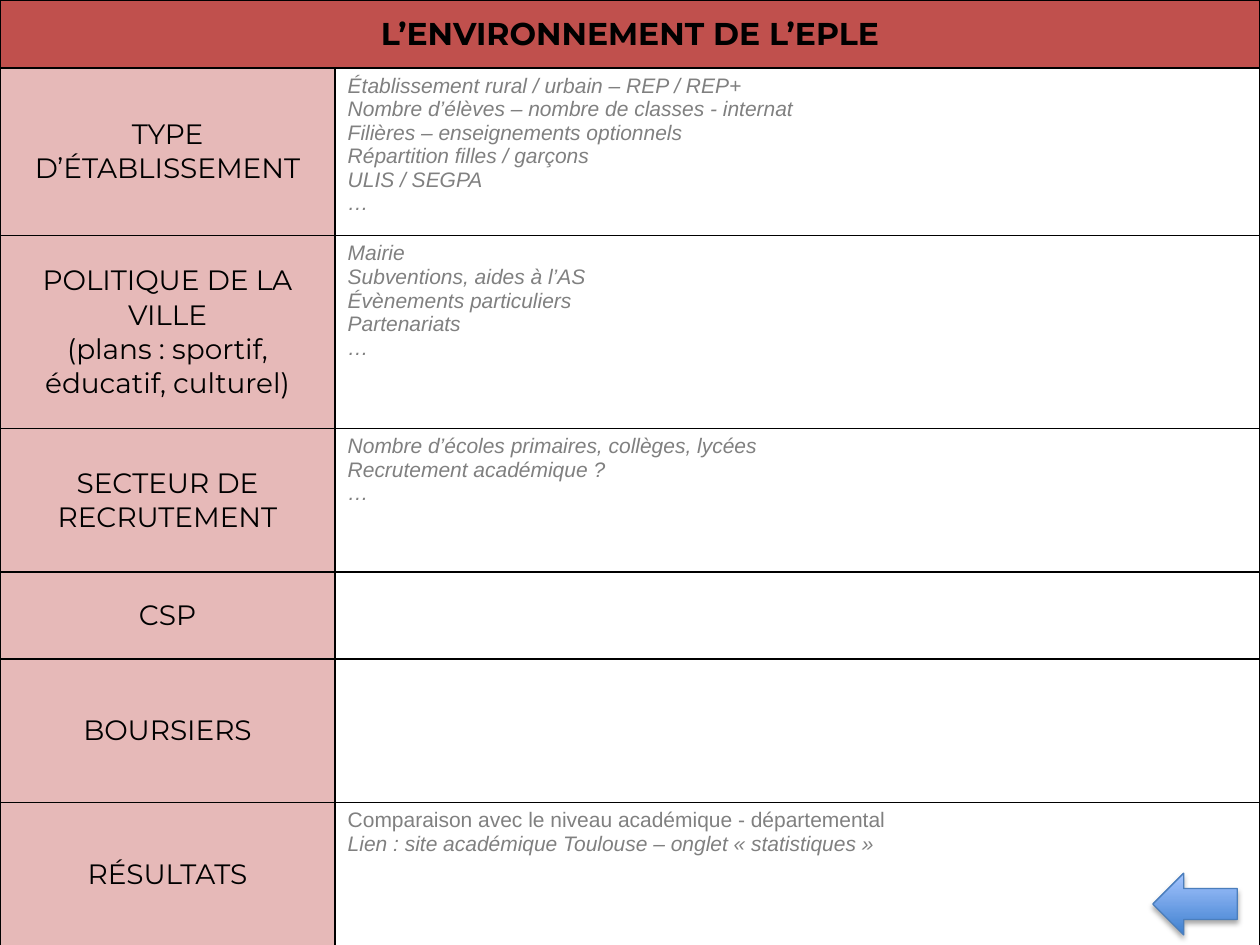
from lxml import etree
from pptx import Presentation
from pptx import util as u
from pptx.dml.color import RGBColor
from pptx.enum import shapes, text
from pptx.oxml import parse_xml
from pptx.oxml.ns import nsdecls, qn

COLUMN_WIDTHS = [2.66, 7.34]
TITLE = "L’ENVIRONNEMENT DE L’EPLE"
TITLE_HEIGHT = 0.54

# Row height, heading paragraphs, note paragraphs
TOPICS = [
    (1.33, ["TYPE D’ÉTABLISSEMENT"],
     ["Établissement rural / urbain – REP / REP+",
      "Nombre d’élèves – nombre de classes - internat",
      "Filières – enseignements optionnels",
      "Répartition filles / garçons",
      "ULIS / SEGPA",
      "…"]),
    (1.53, ["POLITIQUE DE LA VILLE", "(plans : sportif, éducatif, culturel)"],
     ["Mairie",
      "Subventions, aides à l’AS",
      "Évènements particuliers",
      "Partenariats",
      "…"]),
    (1.14, ["SECTEUR DE RECRUTEMENT"],
     ["Nombre d’écoles primaires, collèges, lycées",
      "Recrutement académique ?",
      "…"]),
    (0.69, ["CSP"], []),
    (1.14, ["BOURSIERS"], []),
    (1.14, ["RÉSULTATS"],
     ["Comparaison avec le niveau académique - départemental",
      "Lien : site académique Toulouse – onglet « statistiques »"]),
]
UPRIGHT_NOTE = "Comparaison avec le niveau académique - départemental"


def color(value):
    return RGBColor.from_string(value)


def style_cell(cell, fill):
    """Solid fill and thin black borders on all four sides."""
    cell.fill.solid()
    cell.fill.fore_color.rgb = color(fill)
    properties = cell._tc.get_or_add_tcPr()
    for position, side in enumerate(["lnL", "lnR", "lnT", "lnB"]):
        border = parse_xml(
            f'<a:{side} {nsdecls("a")} w="12700"><a:solidFill>'
            f'<a:srgbClr val="000000"/></a:solidFill></a:{side}>')
        properties.insert(position, border)


def add_span(para, wording, size, font, ink, bold=False, italic=False):
    span = para.add_run()
    span.text = wording
    span.font.size = u.Pt(size)
    span.font.name = font
    span.font.bold = bold
    span.font.italic = italic
    span.font.color.rgb = color(ink)


def cell_paragraphs(cell, lines):
    """Pair each line with its own paragraph of the cell."""
    frame = cell.text_frame
    for index, line in enumerate(lines):
        yield (frame.add_paragraph() if index else frame.paragraphs[0]), line


def write_heading(cell, lines, size=16, bold=False):
    cell.vertical_anchor = text.MSO_ANCHOR.MIDDLE
    for para, line in cell_paragraphs(cell, lines):
        para.alignment = text.PP_ALIGN.CENTER
        add_span(para, line, size, "Montserrat", "000000", bold=bold)


def write_notes(cell, lines):
    for para, line in cell_paragraphs(cell, lines):
        add_span(para, line, 12, "Arial", "808080", italic=line != UPRIGHT_NOTE)


def add_topic_table(page):
    heights = [TITLE_HEIGHT] + [topic[0] for topic in TOPICS]
    table = page.shapes.add_table(
        len(heights), len(COLUMN_WIDTHS), 0, 0,
        u.Inches(10), u.Inches(7.5)).table
    table.first_row = table.horz_banding = False
    for column, width in zip(table.columns, COLUMN_WIDTHS):
        column.width = u.Inches(width)
    for row, height in zip(table.rows, heights):
        row.height = u.Inches(height)

    # Title row across both columns
    title = table.cell(0, 0)
    title.merge(table.cell(0, 1))
    for cell in table.rows[0].cells:
        style_cell(cell, "C0504D")
    write_heading(title, [TITLE], size=18, bold=True)

    # One row per topic
    for row, (_, heading, notes) in enumerate(TOPICS, start=1):
        label, body = table.cell(row, 0), table.cell(row, 1)
        style_cell(label, "E6B9B8")
        style_cell(body, "FFFFFF")
        write_heading(label, heading)
        write_notes(body, notes)


def add_soft_shadow(shape):
    shape.shadow.inherit = False
    effects = shape._element.spPr.find(qn("a:effectLst"))
    shadow = etree.SubElement(
        effects, qn("a:outerShdw"), blurRad=str(u.Pt(3.1)),
        dist=str(u.Pt(1.8)), dir="5400000", rotWithShape="0")
    shade = etree.SubElement(shadow, qn("a:srgbClr"), val="000000")
    etree.SubElement(shade, qn("a:alpha"), val="35000")


def add_back_arrow(page):
    arrow = page.shapes.add_shape(
        shapes.MSO_SHAPE.LEFT_ARROW, u.Inches(9.15), u.Inches(6.93),
        u.Inches(0.67), u.Inches(0.49))
    arrow.fill.gradient()
    arrow.fill.gradient_angle = 90
    for stop, shade in zip(arrow.fill.gradient_stops, ["3F80CE", "A4C4FF"]):
        stop.color.rgb = color(shade)
    arrow.line.color.rgb = color("4B7EBC")
    arrow.line.width = u.Pt(0.75)
    add_soft_shadow(arrow)


def main():
    deck = Presentation()
    deck.slide_width, deck.slide_height = u.Inches(10), u.Inches(7.5)
    page = deck.slides.add_slide(deck.slide_layouts[6])
    add_topic_table(page)
    add_back_arrow(page)
    deck.save("out.pptx")


if __name__ == "__main__":
    main()
